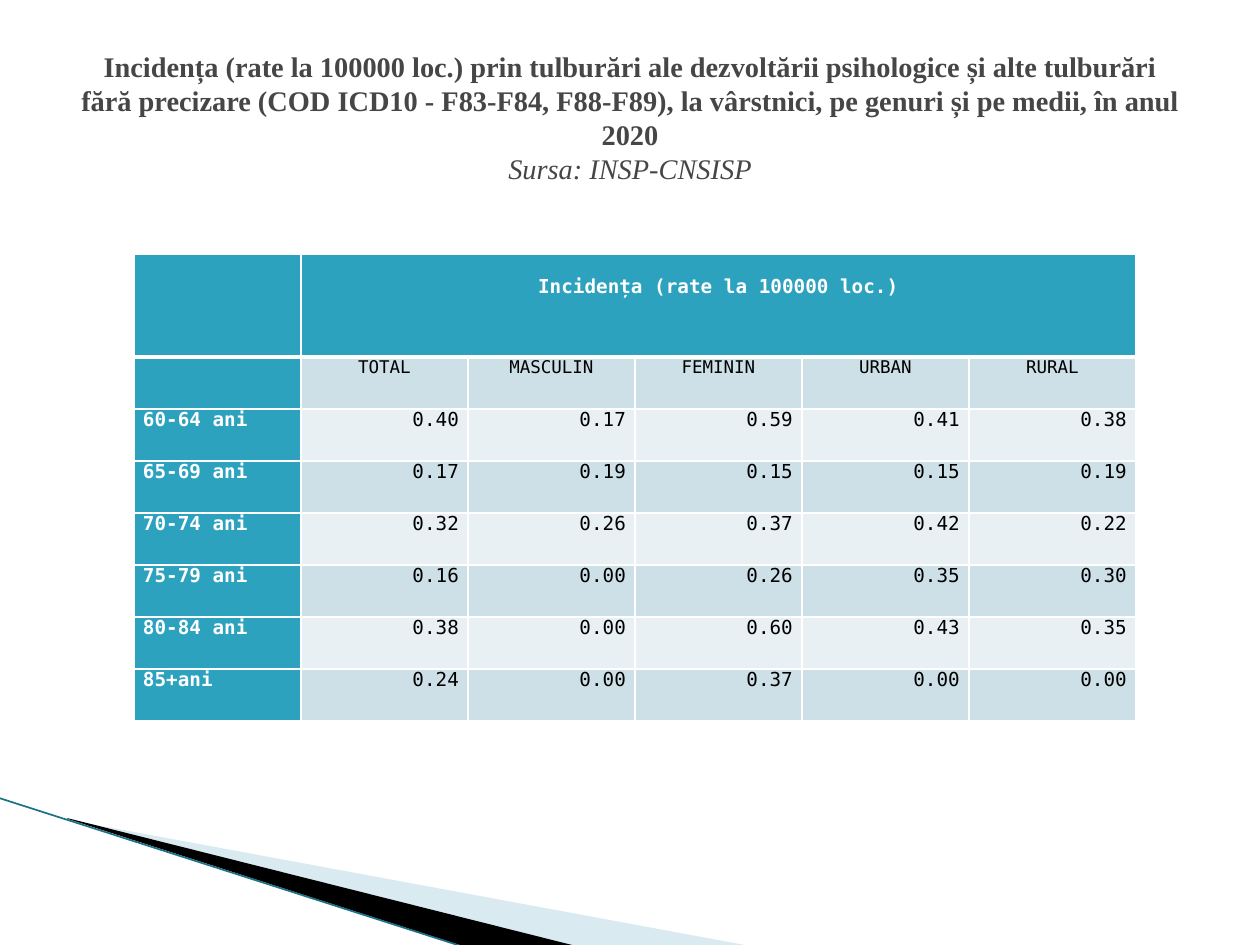
from lxml import etree
from pptx import Presentation
from pptx.dml.color import RGBColor
from pptx.enum.shapes import MSO_CONNECTOR
from pptx.enum.text import MSO_ANCHOR, PP_ALIGN
from pptx.oxml.ns import qn
from pptx.util import Emu, Pt

PX = 914400 / 126
LEFT, CENTER, RIGHT = PP_ALIGN.LEFT, PP_ALIGN.CENTER, PP_ALIGN.RIGHT
MIDDLE = MSO_ANCHOR.MIDDLE
STRAIGHT = MSO_CONNECTOR.STRAIGHT
TEAL, PALE, PALER = "2DA2BF", "CDE0E8", "E8F0F4"
WHITE, BLACK = "FFFFFF", "000000"


def px(length):
    return Emu(round(length * PX))


def color(value):
    return RGBColor.from_string(value)


deck = Presentation()
deck.slide_width, deck.slide_height = px(1260), px(945)
page = deck.slides.add_slide(deck.slide_layouts[6])

# Corner wedges: fill, opacity in percent, outline points
wedges = [
    ("A0CBDC", 40, [(69, 820), (750, 946), (575, 946), (69, 819)]),
    (BLACK, 100, [(67, 818), (576, 946), (469, 948), (68, 819)]),
]
for fill, opacity, points in wedges:
    builder = page.shapes.build_freeform(*points[0], scale=PX)
    builder.add_line_segments(points[1:], close=True)
    wedge = builder.convert_to_shape()
    wedge.shadow.inherit = False
    wedge.fill.solid()
    wedge.fill.fore_color.rgb = color(fill)
    wedge.line.fill.background()
    if opacity < 100:
        tint = wedge.fill._xPr.find(qn("a:solidFill"))[0]
        etree.SubElement(tint, qn("a:alpha"), val=str(opacity * 1000))

# Corner line
edge = page.shapes.add_connector(STRAIGHT, px(-1), px(798), px(467), px(948))
edge.line.color.rgb = color("1B7188")
edge.line.width = Pt(0.95)
etree.SubElement(edge._element.spPr, qn("a:effectLst"))

# Title with source line
box = page.shapes.add_textbox(px(63), px(38), px(1134), px(158))
frame = box.text_frame
frame.word_wrap = True
frame.vertical_anchor = MIDDLE
para = frame.paragraphs[0]
para.alignment = CENTER
para.font.name = "Times New Roman"
para.font.size = Pt(16.2)
para.font.color.rgb = color("464646")
span = para.add_run()
span.text = (
    "Incidența (rate la 100000 loc.) prin tulburări ale dezvoltării psihologice "
    "și alte tulburări fără precizare (COD ICD10 - F83-F84, F88-F89), "
    "la vârstnici, pe genuri și pe medii, în anul 2020"
)
span.font.bold = True
para.add_line_break()
span = para.add_run()
span.text = "Sursa: INSP-CNSISP"
span.font.italic = True

# Incidence table
rows = [
    ["", "Incidența (rate la 100000 loc.)", "", "", "", ""],
    ["", "TOTAL", "MASCULIN", "FEMININ", "URBAN", "RURAL"],
    ["60-64 ani", "0.40", "0.17", "0.59", "0.41", "0.38"],
    ["65-69 ani", "0.17", "0.19", "0.15", "0.15", "0.19"],
    ["70-74 ani", "0.32", "0.26", "0.37", "0.42", "0.22"],
    ["75-79 ani", "0.16", "0.00", "0.26", "0.35", "0.30"],
    ["80-84 ani", "0.38", "0.00", "0.60", "0.43", "0.35"],
    ["85+ani", "0.24", "0.00", "0.37", "0.00", "0.00"],
]
table = page.shapes.add_table(8, 6, px(134), px(254), px(1002), px(467)).table
for column in table.columns:
    column.width = px(167)
for r, values in enumerate(rows):
    table.rows[r].height = px(103 if r == 0 else 52)
    for c, value in enumerate(values):
        heading = r == 0 or c == 0
        cell = table.cell(r, c)
        cell.margin_left = cell.margin_right = px(9)
        cell.margin_top = px(22 if r == 0 else 0)
        cell.margin_bottom = 0

        # White borders, thicker under the top row
        for side in ("L", "R", "T", "B"):
            thick = (r == 0 and side == "B") or (r == 1 and side == "T")
            border = etree.SubElement(
                cell._tc.get_or_add_tcPr(), qn(f"a:ln{side}"),
                w=str(Pt(3 if thick else 1)))
            paint = etree.SubElement(border, qn("a:solidFill"))
            etree.SubElement(paint, qn("a:srgbClr"), val=WHITE)
        cell.fill.solid()
        cell.fill.fore_color.rgb = color(
            TEAL if heading else PALE if r % 2 else PALER)

        cell.text = value
        para = cell.text_frame.paragraphs[0]
        para.alignment = LEFT if c == 0 else CENTER if r < 2 else RIGHT
        para.font.name = "DejaVu Sans Mono"
        para.font.size = Pt(10 if r == 1 else 11)
        para.font.bold = heading
        para.font.color.rgb = color(WHITE if heading else BLACK)
table.cell(0, 1).merge(table.cell(0, 5))

deck.save("out.pptx")
